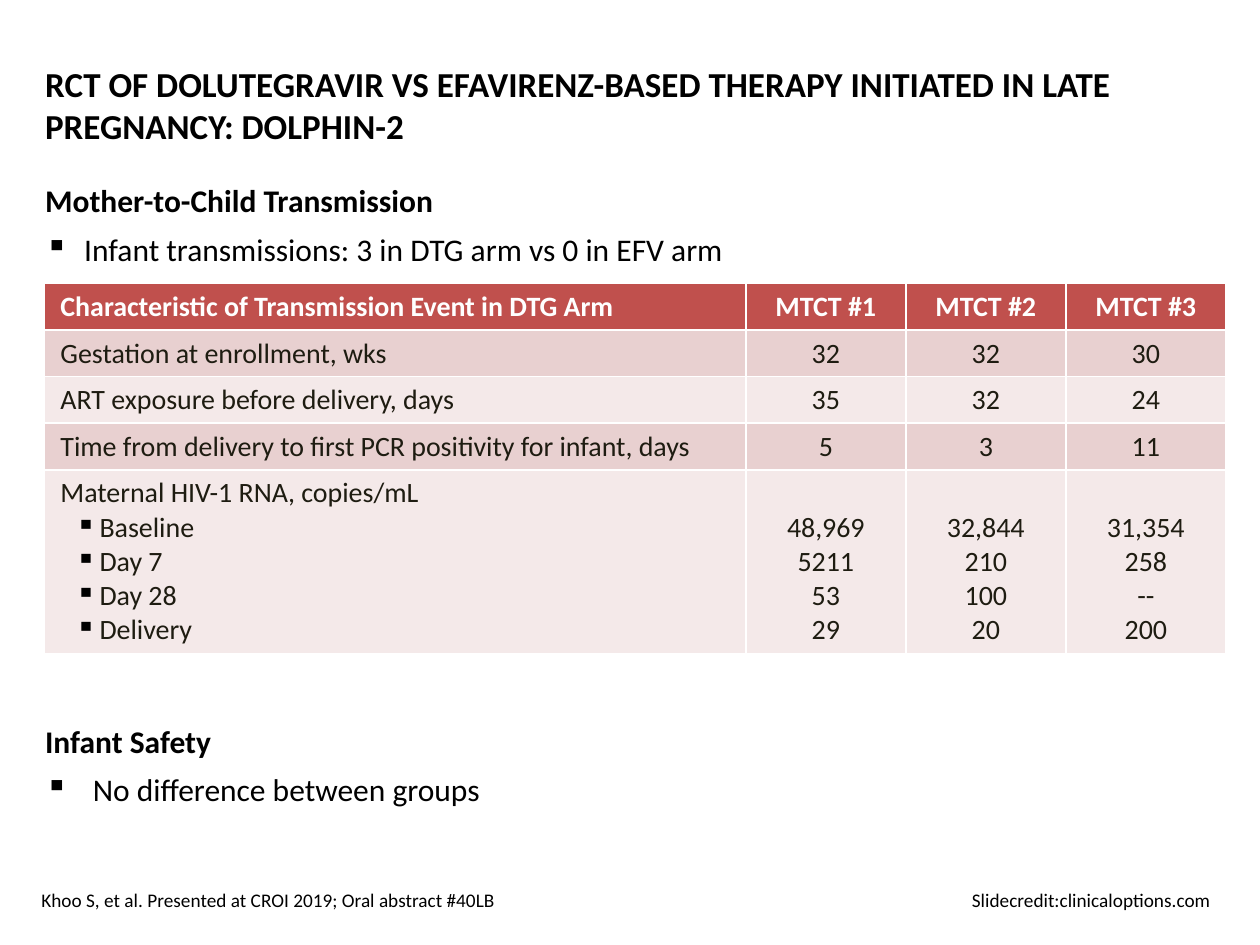
import dataclasses

import lxml.etree
import pptx
import pptx.dml.color
import pptx.enum.text
import pptx.oxml.ns
import pptx.util

Inches = pptx.util.Inches
ALIGN = pptx.enum.text.PP_ALIGN
ANCHOR = pptx.enum.text.MSO_ANCHOR


@dataclasses.dataclass(frozen=True)
class Theme:
    font: str = "Calibri"
    ink: str = "000000"
    cell_ink: str = "1E1C11"
    header_ink: str = "FFFFFF"
    header_fill: str = "C0504D"
    band_fills: tuple = ("E8D0D0", "F4E9E9")
    title_size: int = 20
    body_size: int = 18
    table_size: int = 16
    footer_size: int = 11


THEME = Theme()

HEADER = ["Characteristic of Transmission Event in DTG Arm", "MTCT #1", "MTCT #2", "MTCT #3"]
EVENTS = [
    ["Gestation at enrollment, wks", "32", "32", "30"],
    ["ART exposure before delivery, days", "35", "32", "24"],
    ["Time from delivery to first PCR positivity for infant, days", "5", "3", "11"],
    [
        "Maternal HIV-1 RNA, copies/mL\nBaseline\nDay 7\nDay 28\nDelivery",
        "48,969\n5211\n53\n29",
        "32,844\n210\n100\n20",
        "31,354\n258\n--\n200",
    ],
]


def add_child(parent, tag, **attributes):
    return lxml.etree.SubElement(parent, pptx.oxml.ns.qn(tag), attributes)


def add_bullet(paragraph, left, hanging):
    properties = paragraph._p.get_or_add_pPr()
    properties.set("marL", str(Inches(left)))
    properties.set("indent", str(-Inches(hanging)))
    color = add_child(properties, "a:buClr")
    add_child(color, "a:srgbClr", val=THEME.ink)
    add_child(properties, "a:buChar", char="▪")


def add_right_tab(paragraph, position):
    tabs = add_child(paragraph._p.get_or_add_pPr(), "a:tabLst")
    add_child(tabs, "a:tab", pos=str(Inches(position)), algn="r")


def style_text(paragraph, size, color, bold=False):
    for run in paragraph.runs:
        run.font.name = THEME.font
        run.font.size = pptx.util.Pt(size)
        run.font.bold = bold
        run.font.color.rgb = pptx.dml.color.RGBColor.from_string(color)


def add_text(slide, text, left, top, height, size, bold=False, anchor=ANCHOR.MIDDLE):
    box = slide.shapes.add_textbox(Inches(left), Inches(top), Inches(9.53), Inches(height))
    frame = box.text_frame
    frame.word_wrap = True
    frame.vertical_anchor = anchor
    frame.text = text
    for paragraph in frame.paragraphs:
        style_text(paragraph, size, THEME.ink, bold)
    return frame


def add_section(slide, heading, finding, top, indent):
    frame = add_text(slide, f"{heading}\n{finding}", 0.26, top, 0.85,
                     THEME.body_size, anchor=ANCHOR.TOP)
    heading_line, finding_line = frame.paragraphs
    heading_line.space_after = pptx.util.Pt(6)
    style_text(heading_line, THEME.body_size, THEME.ink, bold=True)
    add_bullet(finding_line, indent, indent)


def fill_cell(cell, text, fill, color, bold, is_label):
    cell.fill.solid()
    cell.fill.fore_color.rgb = pptx.dml.color.RGBColor.from_string(fill)
    cell.margin_left = cell.margin_right = Inches(0.13)
    cell.margin_top = cell.margin_bottom = Inches(0.05)
    cell.vertical_anchor = ANCHOR.MIDDLE if is_label else ANCHOR.BOTTOM
    cell.text_frame.text = text
    for index, paragraph in enumerate(cell.text_frame.paragraphs):
        if is_label and index > 0:
            add_bullet(paragraph, 0.31, 0.19)
        paragraph.alignment = ALIGN.LEFT if is_label else ALIGN.CENTER
        style_text(paragraph, THEME.table_size, color, bold)


def add_events_table(slide):
    rows = [HEADER] + EVENTS
    column_widths = [5.57] + [1.27] * 3
    row_heights = [0.37] * 4 + [1.46]
    table = slide.shapes.add_table(
        len(rows), len(HEADER), Inches(0.35), Inches(2.25),
        Inches(sum(column_widths)), Inches(sum(row_heights))).table
    for column, width in zip(table.columns, column_widths):
        column.width = Inches(width)
    for row, height in zip(table.rows, row_heights):
        row.height = Inches(height)
    for row_index, row in enumerate(rows):
        is_header = row_index == 0
        fill = THEME.header_fill if is_header else THEME.band_fills[(row_index - 1) % 2]
        color = THEME.header_ink if is_header else THEME.cell_ink
        for column_index, text in enumerate(row):
            fill_cell(table.cell(row_index, column_index), text, fill, color,
                      is_header, column_index == 0)


def add_footer(slide, citation, credit):
    frame = add_text(slide, f"{citation}\t{credit}", 0.23, 6.94, 0.4, THEME.footer_size)
    add_right_tab(frame.paragraphs[0], 9.28)


def main():
    deck = pptx.Presentation()
    deck.slide_width, deck.slide_height = Inches(10), Inches(7.5)
    slide = deck.slides.add_slide(deck.slide_layouts[6])
    add_section(slide, "Mother-to-Child Transmission",
                "Infant transmissions: 3 in DTG arm vs 0 in EFV arm", 1.39, 0.31)
    add_section(slide, "Infant Safety", "No difference between groups", 5.68, 0.38)
    add_text(slide, "RCT OF DOLUTEGRAVIR VS EFAVIRENZ-BASED THERAPY INITIATED IN LATE "
             "PREGNANCY: DOLPHIN-2", 0.26, 0.36, 0.94, THEME.title_size, bold=True)
    add_events_table(slide)
    add_footer(slide, "Khoo S, et al. Presented at CROI 2019; Oral abstract #40LB",
               "Slidecredit:clinicaloptions.com")
    deck.save("out.pptx")


if __name__ == "__main__":
    main()
